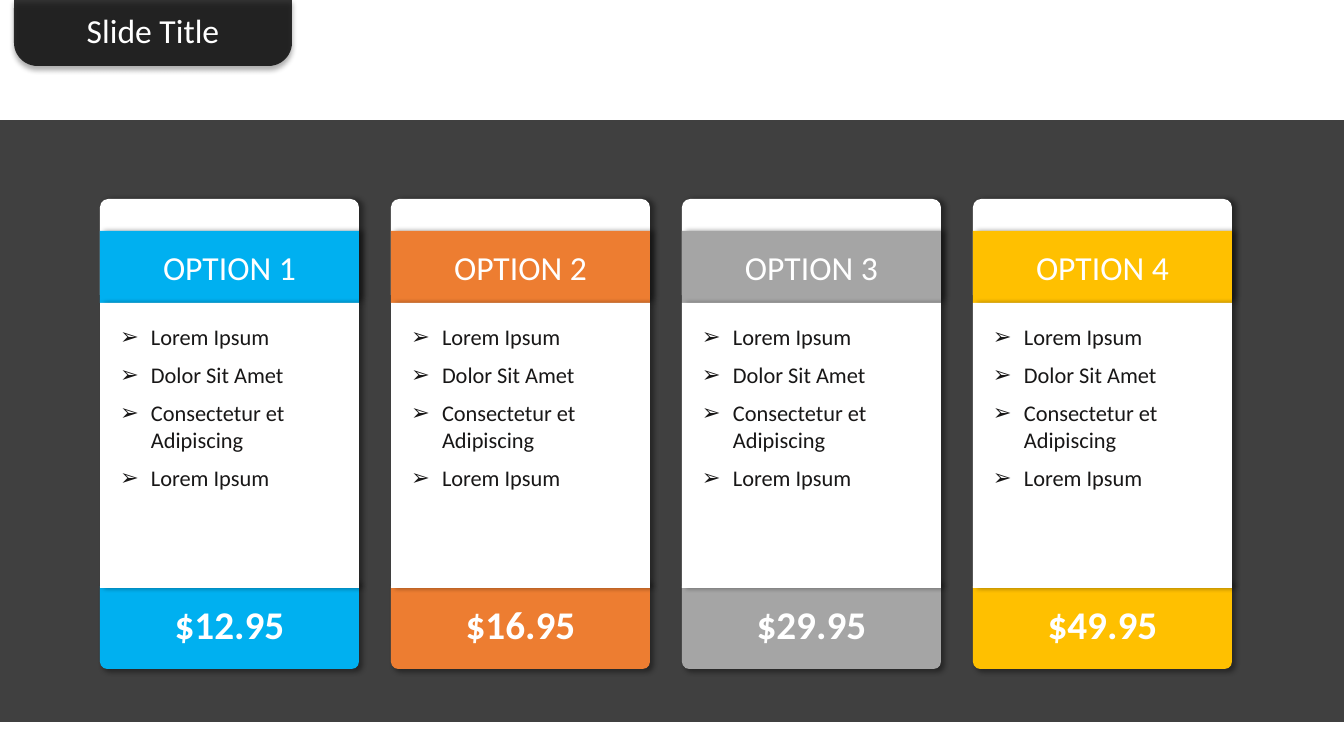
import dataclasses

import pptx
import pptx.dml.color
import pptx.enum.shapes
import pptx.enum.text
import pptx.oxml.ns
import pptx.oxml.xmlchemy
import pptx.util
from lxml import etree

SCALE = 914400 / 100.8
KIND = pptx.enum.shapes.MSO_SHAPE
ANCHOR = pptx.enum.text.MSO_ANCHOR
ALIGN = pptx.enum.text.PP_ALIGN


@dataclasses.dataclass(frozen=True)
class Theme:
    font: str = "Calibri"
    black: str = "000000"
    white: str = "FFFFFF"
    ink: str = "181717"
    head: int = 24
    price: int = 28
    item: int = 16
    gap: int = 8


THEME = Theme()
ITEMS = ["Lorem Ipsum", "Dolor Sit Amet", "Consectetur et Adipiscing", "Lorem Ipsum"]
PLANS = [
    ("OPTION 1", "$12.95", "00B0F0"),
    ("OPTION 2", "$16.95", "ED7D31"),
    ("OPTION 3", "$29.95", "A5A5A5"),
    ("OPTION 4", "$49.95", "FFC000"),
]


def px(length):
    return pptx.util.Emu(round(length * SCALE))


def tag(parent, name, **attrs):
    """Append a drawing element to the parent."""
    node = etree.SubElement(parent, pptx.oxml.ns.qn("a:" + name))
    for key, value in attrs.items():
        node.set(key, str(value))
    return node


def place(shape, box):
    shape.left, shape.top, shape.width, shape.height = map(px, box)


def paint(shape, color, alpha=100, angle=None):
    """Fill without outline; cast a shadow if an angle is given."""
    shape.fill.solid()
    shape.fill.fore_color.rgb = pptx.dml.color.RGBColor.from_string(color)
    if alpha < 100:
        fill = shape.element.xpath("./p:spPr/a:solidFill/a:srgbClr")[0]
        tag(fill, "alpha", val=alpha * 1000)
    shape.line.fill.background()
    shape.shadow.inherit = False
    if angle is not None:
        effects = shape.element.xpath("./p:spPr/a:effectLst")[0]
        shade = tag(effects, "outerShdw", blurRad=pptx.util.Pt(4),
                    dist=pptx.util.Pt(3), dir=angle * 60000,
                    algn="ctr", rotWithShape=0)
        tag(tag(shade, "srgbClr", val=THEME.black), "alpha", val=40000)


def block(slide, kind, box, color, alpha=100, angle=None, rounds=()):
    shape = slide.shapes.add_shape(kind, *map(px, box))
    for index, value in enumerate(rounds):
        shape.adjustments[index] = value
    paint(shape, color, alpha, angle)
    return shape


def write(para, text, size, color, bold=False):
    run = para.add_run()
    run.text = text
    run.font.name = THEME.font
    run.font.size = pptx.util.Pt(size)
    run.font.bold = bold
    run.font.color.rgb = pptx.dml.color.RGBColor.from_string(color)


def label(shape, text, size, bold=False):
    """Write one centred white line."""
    frame = shape.text_frame
    frame.word_wrap = True
    frame.auto_size = pptx.enum.text.MSO_AUTO_SIZE.NONE
    frame.vertical_anchor = ANCHOR.MIDDLE
    para = frame.paragraphs[0]
    para.alignment = ALIGN.CENTER
    write(para, text, size, THEME.white, bold)


def raise_up(slide, shape):
    """Bring a placeholder in front of all shapes drawn so far."""
    slide.shapes.element.append(shape.element)


def tab(slide, box, text):
    x, y, w, h = box
    block(slide, KIND.ROUND_2_SAME_RECTANGLE, box, THEME.black, 80, 90, (0, 0.35))
    title = slide.shapes.title
    raise_up(slide, title)
    place(title, (x, y + 6, w, 50))
    label(title, text, THEME.head)


def listing(slide, body, box, items):
    raise_up(slide, body)
    place(body, box)
    paint(body, THEME.white, angle=0)
    frame = body.text_frame
    frame.word_wrap = True
    frame.auto_size = pptx.enum.text.MSO_AUTO_SIZE.NONE
    frame.vertical_anchor = ANCHOR.TOP
    frame.margin_left = frame.margin_top = px(20)
    frame.margin_right, frame.margin_bottom = px(10), px(5)
    for index, item in enumerate(items):
        para = frame.paragraphs[0] if index == 0 else frame.add_paragraph()
        props = para._p.get_or_add_pPr()
        props.set("marL", str(px(31)))
        props.set("indent", str(-px(31)))
        tag(props, "buFont", typeface="Arial")
        tag(props, "buChar", char="➢")
        para.alignment = ALIGN.LEFT
        para.line_spacing = 1.0
        para.space_before = pptx.util.Pt(THEME.gap if index else 0)
        write(para, item, THEME.item, THEME.ink)


def card(slide, body, box, plan):
    x, y, w, h = box
    name, cost, color = plan
    foot = block(slide, KIND.ROUNDED_RECTANGLE, (x, y + h - 90, w, 90),
                 color, angle=45, rounds=(0.08,))
    label(foot, cost, THEME.price, True)
    block(slide, KIND.ROUNDED_RECTANGLE, (x, y, w, 104),
          THEME.white, angle=0, rounds=(0.08,))
    head = block(slide, KIND.RECTANGLE, (x, y + 32, w, 72), color, angle=0)
    label(head, name, THEME.head)
    listing(slide, body, (x, y + 104, w, h - 185), ITEMS)


def pricing(deck):
    slide = deck.slides.add_slide(deck.slide_layouts.get_by_name("Comparison"))
    bodies = [p for p in slide.placeholders if p.placeholder_format.idx > 0]
    block(slide, KIND.RECTANGLE, (0, 120, 1344, 602), THEME.black, 75)
    for index, (body, plan) in enumerate(zip(bodies, PLANS)):
        card(slide, body, (100 + 291 * index, 199, 259, 470), plan)
    tab(slide, (14, -1, 278, 67), "Slide Title")


def main():
    deck = pptx.Presentation()
    deck.slide_width, deck.slide_height = px(1344), px(756)
    pricing(deck)
    deck.save("out.pptx")


if __name__ == "__main__":
    main()
